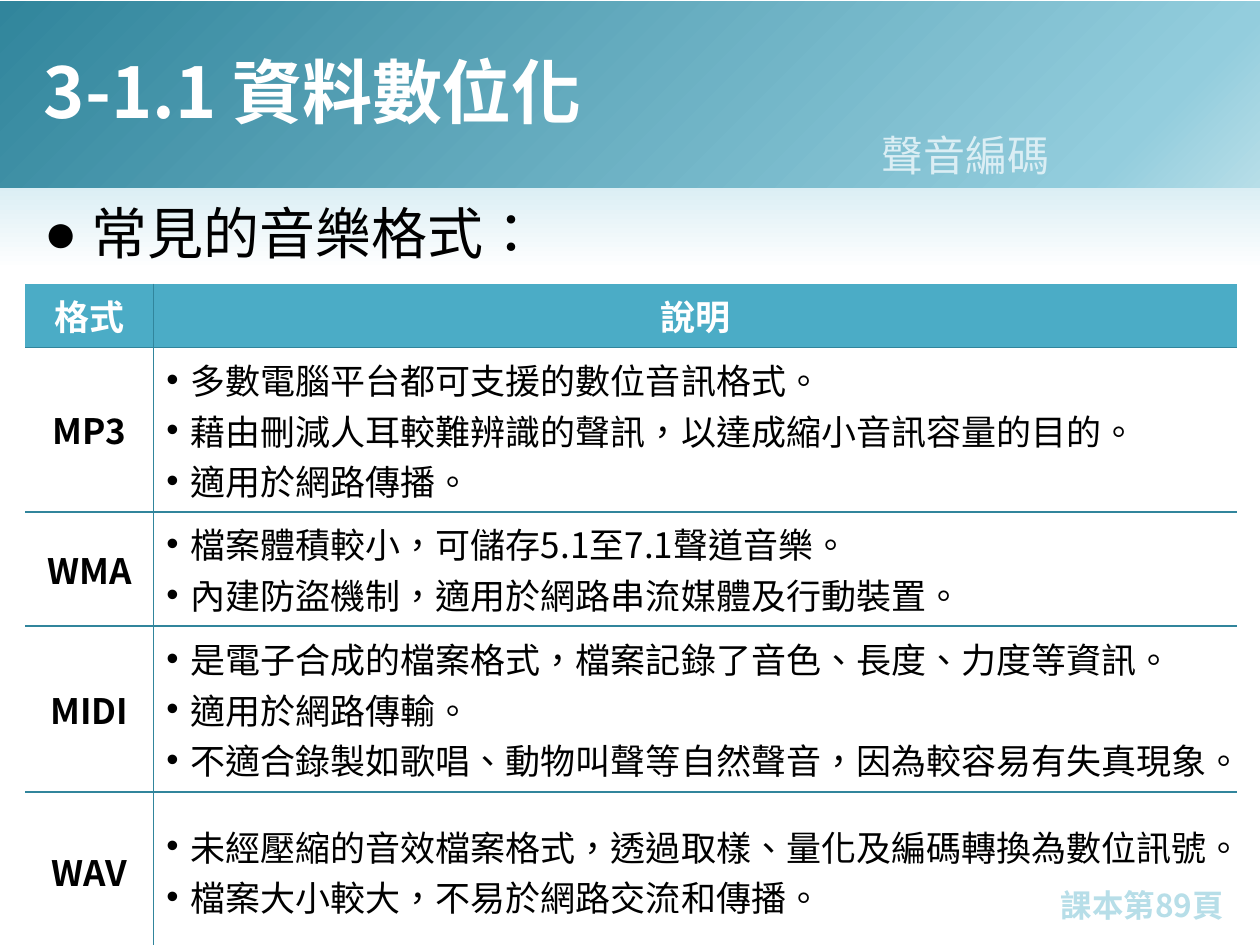
from dataclasses import dataclass

from lxml.etree import SubElement
from pptx import Presentation
from pptx.dml.color import RGBColor
from pptx.enum.shapes import MSO_SHAPE
from pptx.enum.text import MSO_ANCHOR, PP_ALIGN
from pptx.oxml import parse_xml
from pptx.oxml.ns import nsdecls, qn
from pptx.util import Inches, Pt

CELL = 0.1  # inches; the slide is 100 columns by 75 rows


@dataclass(frozen=True)
class Theme:
    font: str = "Noto Sans CJK SC"
    dot: str = "Arial"
    white: str = "FFFFFF"
    black: str = "000000"
    teal: str = "31859C"
    sky: str = "93CDDD"
    pale: str = "B7DEE8"
    mist: str = "DBEEF4"
    head: str = "4BACC6"
    title: int = 40
    lead: int = 32
    topic: int = 24
    body: int = 20
    note: int = 18


def unit(count):
    return Inches(count * CELL)


class Page:
    def __init__(self, theme):
        self.theme = theme
        self.deck = Presentation()
        self.deck.slide_width = unit(100)
        self.deck.slide_height = unit(75)
        self.slide = self.deck.slides.add_slide(self.deck.slide_layouts[6])

    def band(self, box, stops, angle):
        """Add a rectangle with a linear gradient; stops are (percent, colour)."""
        shape = self.slide.shapes.add_shape(MSO_SHAPE.RECTANGLE, *map(unit, box))
        shape.shadow.inherit = False
        shape.line.fill.background()
        marks = "".join(
            f'<a:gs pos="{share * 1000}"><a:srgbClr val="{color}"/></a:gs>'
            for share, color in stops
        )
        fill = parse_xml(
            f'<a:gradFill {nsdecls("a")} rotWithShape="1"><a:gsLst>{marks}</a:gsLst>'
            f'<a:lin ang="{angle * 60000}" scaled="0"/></a:gradFill>'
        )
        shape.element.spPr.find(qn("a:prstGeom")).addnext(fill)

    def style(self, para, size, color, bold=False, align=PP_ALIGN.LEFT):
        para.alignment = align
        for run in para.runs:
            font = run.font
            font.name, font.size, font.bold = self.theme.font, Pt(size), bold
            font.color.rgb = RGBColor.from_string(color)
            props = run._r.get_or_add_rPr()
            props.set("lang", "zh-TW")
            latin = props.find(qn("a:latin"))
            latin.addnext(parse_xml(
                f'<a:ea {nsdecls("a")} typeface="{self.theme.font}"/>'))

    def bullet(self, para, char, indent):
        props = para._p.get_or_add_pPr()
        props.set("marL", str(Inches(indent)))
        props.set("indent", str(-Inches(indent)))
        props.set("hangingPunct", "1")
        SubElement(props, qn("a:buFont"), typeface=self.theme.dot)
        SubElement(props, qn("a:buChar"), char=char)

    def text(self, box, words, size, color, wrap=True, anchor=MSO_ANCHOR.TOP,
             mark=None, **look):
        frame = self.slide.shapes.add_textbox(*map(unit, box)).text_frame
        frame.word_wrap = wrap
        frame.vertical_anchor = anchor
        frame.text = words
        para = frame.paragraphs[0]
        if mark:
            self.bullet(para, mark, 0.38)
        self.style(para, size, color, **look)

    def edges(self, cell, drawn):
        """Rule the sides named in drawn and clear the others."""
        props = cell._tc.get_or_add_tcPr()
        for side in "LRTB":
            line = SubElement(props, qn(f"a:ln{side}"), w=str(Pt(1)))
            if side in drawn:
                fill = SubElement(line, qn("a:solidFill"))
                SubElement(fill, qn("a:srgbClr"), val=self.theme.teal)
            else:
                SubElement(line, qn("a:noFill"))

    def table(self, box, cols, rows, data):
        table = self.slide.shapes.add_table(
            len(rows), len(cols), *map(unit, box)).table
        table.horz_banding = False
        for col, width in zip(table.columns, cols):
            col.width = unit(width)
        for row, height in zip(table.rows, rows):
            row.height = unit(height)
        for r, record in enumerate(data):
            for c, words in enumerate(record):
                self.fill(table.cell(r, c), words, r == 0, c == 0)
                sides = "R" if c == 0 else "L"
                sides += "T" if r > 0 else ""
                sides += "B" if r < len(rows) - 1 else ""
                self.edges(table.cell(r, c), sides)
                self.paint(table.cell(r, c), r == 0)

    def fill(self, cell, words, head, label):
        theme = self.theme
        cell.vertical_anchor = MSO_ANCHOR.MIDDLE
        cell.text = words
        bold = head or label
        for para in cell.text_frame.paragraphs:
            if not bold:
                self.bullet(para, "•", 0.19)
            self.style(para, theme.body, theme.white if head else theme.black,
                       bold, PP_ALIGN.CENTER if bold else PP_ALIGN.LEFT)

    def paint(self, cell, head):
        if head:
            cell.fill.solid()
            cell.fill.fore_color.rgb = RGBColor.from_string(self.theme.head)
        else:
            cell.fill.background()


FORMATS = [
    ("格式", "說明"),
    ("MP3", "多數電腦平台都可支援的數位音訊格式。\n"
            "藉由刪減人耳較難辨識的聲訊，以達成縮小音訊容量的目的。\n"
            "適用於網路傳播。"),
    ("WMA", "檔案體積較小，可儲存5.1至7.1聲道音樂。\n"
            "內建防盜機制，適用於網路串流媒體及行動裝置。"),
    ("MIDI", "是電子合成的檔案格式，檔案記錄了音色、長度、力度等資訊。\n"
             "適用於網路傳輸。\n"
             "不適合錄製如歌唱、動物叫聲等自然聲音，因為較容易有失真現象。"),
    ("WAV", "未經壓縮的音效檔案格式，透過取樣、量化及編碼轉換為數位訊號。\n"
            "檔案大小較大，不易於網路交流和傳播。"),
]


def main():
    theme = Theme()
    page = Page(theme)
    page.band((0, 14.8, 100, 60.2),
              [(0, theme.mist), (11, theme.white), (100, theme.white)], 90)
    page.band((0, 0.1, 100, 14.8),
              [(0, theme.teal), (88, theme.sky), (100, theme.pale)], 45)
    page.text((2.5, 0.9, 79.2, 12.5), "3-1.1 資料數位化", theme.title,
              theme.white, anchor=MSO_ANCHOR.MIDDLE, bold=True)
    page.text((2.5, 15.3, 95, 53.3), "常見的音樂格式：", theme.lead,
              theme.black, mark="●")
    page.table((2, 22.5, 96.2, 52.9), (10.2, 86),
               (5.07, 13.06, 9.05, 13.17, 12.6), FORMATS)
    page.text((82.3, 69.8, 16.7, 4), "課本第89頁", theme.note, theme.pale,
              bold=True, align=PP_ALIGN.CENTER)
    page.text((68.8, 9.8, 15.5, 5), "聲音編碼", theme.topic, theme.mist,
              wrap=False, align=PP_ALIGN.RIGHT)
    page.deck.save("out.pptx")


if __name__ == "__main__":
    main()
